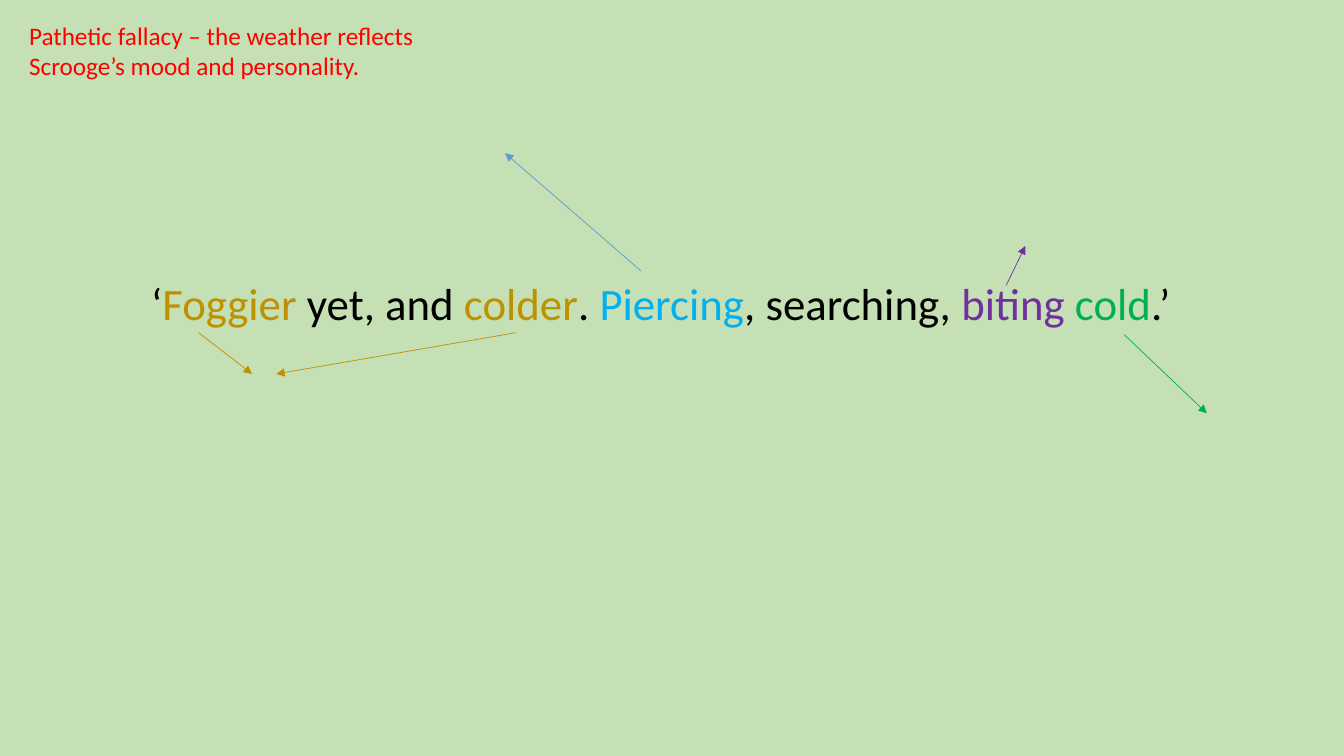
from dataclasses import dataclass

from lxml.etree import SubElement
from pptx import Presentation
from pptx.dml.color import RGBColor
from pptx.enum.shapes import MSO_CONNECTOR
from pptx.enum.text import MSO_AUTO_SIZE
from pptx.oxml.ns import qn
from pptx.util import Pt

PX = 9144  # EMU per px, 100 px to the inch


@dataclass(frozen=True)
class Theme:
    font: str = "Calibri"
    quote_size: int = 32
    note_size: int = 18
    line_width: float = 0.5
    background: str = "C5E0B4"
    text: str = "000000"
    note: str = "FF0000"
    fog: str = "BF9000"
    piercing: str = "00B0F0"
    piercing_arrow: str = "5B9BD5"
    biting: str = "7030A0"
    cold: str = "00B050"


THEME = Theme()

QUOTE = [
    ("‘", THEME.text),
    ("Foggier", THEME.fog),
    (" yet, and ", THEME.text),
    ("colder", THEME.fog),
    (". ", THEME.text),
    ("Piercing", THEME.piercing),
    (", searching, ", THEME.text),
    ("biting ", THEME.biting),
    ("cold", THEME.cold),
    (".’", THEME.text),
]
NOTE = [("Pathetic fallacy – the weather reflects Scrooge’s mood and personality.", THEME.note)]

# Start and end of each arrow, from the top left corner of the quote
ARROWS = [
    ((496, 0), (361, -117), THEME.piercing_arrow),
    ((372, 61), (134, 102), THEME.fog),
    ((975, 63), (1057, 141), THEME.cold),
    ((858, 14), (877, -25), THEME.biting),
    ((57, 61), (110, 102), THEME.fog),
]


def add_text(s, box, runs, size, wrap):
    tf = s.shapes.add_textbox(*(v * PX for v in box)).text_frame
    tf.word_wrap = wrap
    tf.auto_size = MSO_AUTO_SIZE.SHAPE_TO_FIT_TEXT
    p = tf.paragraphs[0]
    for text, color in runs:
        r = p.add_run()
        r.text = text
        r.font.name = THEME.font
        r.font.size = Pt(size)
        r.font.color.rgb = RGBColor.from_string(color)


def add_arrow(s, start, end, color):
    arrow = s.shapes.add_connector(MSO_CONNECTOR.STRAIGHT, *(v * PX for v in start + end))
    arrow.line.color.rgb = RGBColor.from_string(color)
    arrow.line.width = Pt(THEME.line_width)
    SubElement(arrow.line._get_or_add_ln(), qn("a:tailEnd"), type="triangle")
    SubElement(arrow._element.spPr, qn("a:effectLst"))


def add_annotated_quote(s, box):
    """Place the quote in the box, with arrows leading out from its key words."""
    add_text(s, box, QUOTE, THEME.quote_size, wrap=False)
    left, top = box[:2]
    for (x1, y1), (x2, y2), color in ARROWS:
        add_arrow(s, (left + x1, top + y1), (left + x2, top + y2), color)


def add_note(s, box):
    add_text(s, box, NOTE, THEME.note_size, wrap=True)


def main():
    prs = Presentation()
    prs.slide_width, prs.slide_height = 1333 * PX, 750 * PX
    s = prs.slides.add_slide(prs.slide_layouts[6])
    fill = s.background.fill
    fill.solid()
    fill.fore_color.rgb = RGBColor.from_string(THEME.background)
    add_annotated_quote(s, (140, 269, 1048, 64))
    add_note(s, (19, 15, 449, 71))
    prs.save("out.pptx")


if __name__ == "__main__":
    main()
